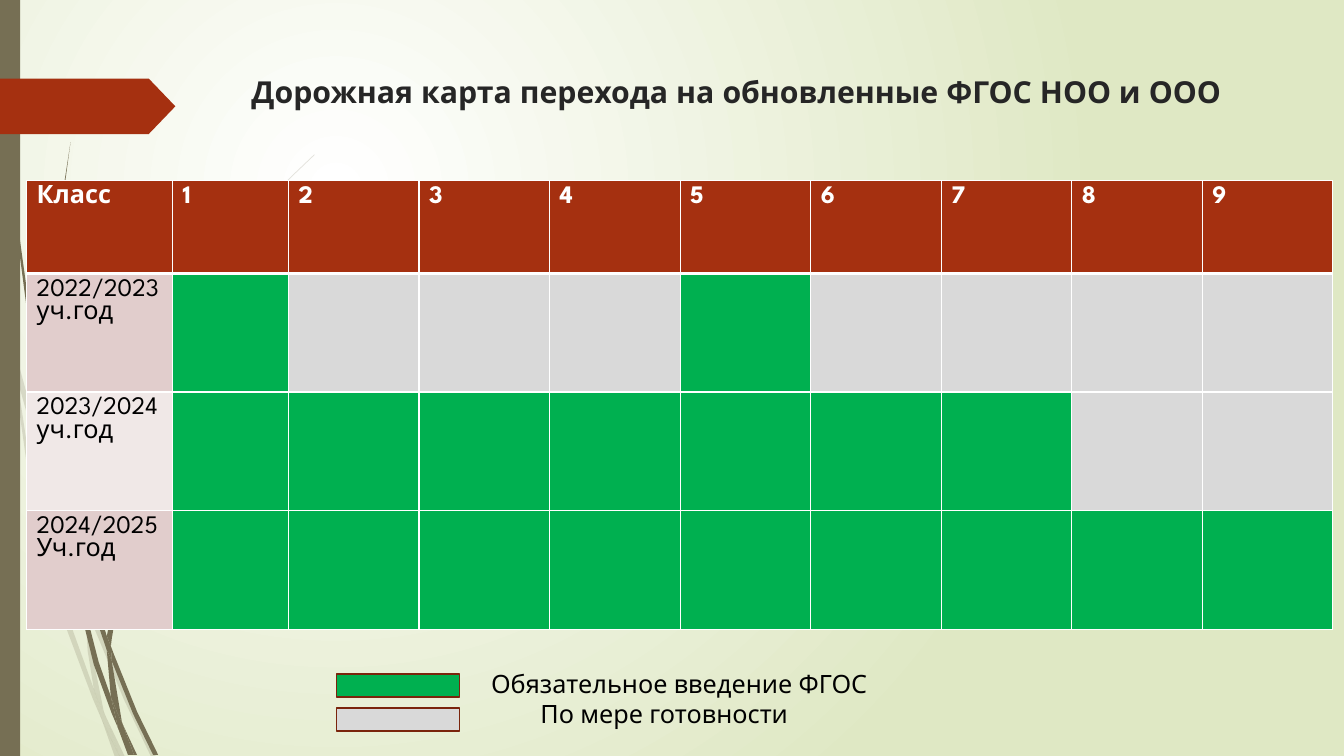
from lxml.etree import SubElement
from pptx import Presentation
from pptx.dml.color import RGBColor
from pptx.enum.shapes import MSO_SHAPE
from pptx.enum.text import MSO_ANCHOR, MSO_AUTO_SIZE, PP_ALIGN
from pptx.oxml import parse_xml
from pptx.oxml.ns import nsdecls, qn
from pptx.util import Cm, Pt

FONT = "League Spartan"
WHITE = RGBColor(0xFF, 0xFF, 0xFF)
BLACK = RGBColor(0x00, 0x00, 0x00)
TITLE_GREY = RGBColor(0x26, 0x26, 0x26)
PALE_OLIVE = RGBColor(0xDF, 0xE8, 0xC4)
OLIVE = RGBColor(0x76, 0x6F, 0x54)
RUST = RGBColor(0xA5, 0x30, 0x10)
DARK_RUST = RGBColor(0x7A, 0x24, 0x0C)
GREEN = RGBColor(0x00, 0xB0, 0x50)
GREY = RGBColor(0xD9, 0xD9, 0xD9)
ROSE = RGBColor(0xE1, 0xCD, 0xCC)
LIGHT_ROSE = RGBColor(0xF0, 0xE8, 0xE7)

# School year, its cell colour, and the classes where the standard is mandatory
YEARS = [
    ("2022/2023 уч.год", ROSE, {1, 5}),
    ("2023/2024 уч.год", LIGHT_ROSE, set(range(1, 8))),
    ("2024/2025\nУч.год", ROSE, set(range(1, 10))),
]
LEGEND = [("Обязательное введение ФГОС", GREEN), ("По мере готовности", GREY)]

# Grass outlines, in grid units of 0.0254 cm
GRASS_UNIT = Cm(0.0254)
FAINT_GRASS = [
    [(11, 350), (9, 322), (0, 282), (0, 299), (10, 344)],
    [(58, 522), (84, 599), (85, 586), (62, 520), (14, 345), (17, 376)],
    [(92, 607), (88, 596), (88, 610), (123, 694), (150, 751), (155, 751), (127, 692)],
    [(119, 751), (124, 751), (105, 711)],
    [(93, 683), (70, 619), (31, 469), (17, 376), (11, 350), (28, 470), (65, 621),
     (92, 693), (101, 714), (99, 707)],
    [(84, 599), (87, 646), (93, 683), (96, 692), (105, 711), (103, 706), (91, 646),
     (88, 610), (88, 608)],
    [(88, 584), (110, 462), (160, 349), (229, 245), (268, 198), (290, 175), (312, 154),
     (312, 153), (289, 175), (268, 197), (228, 244), (158, 348), (107, 461), (85, 584),
     (85, 586), (88, 596)],
    [(101, 714), (114, 751), (119, 751)],
    [(88, 608), (88, 596), (85, 586), (84, 599)],
    [(96, 692), (93, 683), (99, 707), (101, 714), (119, 751), (105, 711)],
]
SOLID_GRASS = [
    [(7, 110), (17, 233), (33, 355), (56, 477), (57, 481), (55, 457), (55, 453),
     (36, 355), (19, 232), (8, 109), (5, 48), (4, 0), (3, 0), (4, 48)],
    [(88, 592), (106, 645), (106, 631), (93, 590), (60, 472), (64, 505)],
    [(113, 649), (110, 641), (111, 656), (132, 708), (152, 749), (157, 749), (136, 706)],
    [(110, 691), (98, 657), (72, 556), (64, 505), (57, 477), (68, 557), (93, 659),
     (111, 708), (117, 722), (116, 717)],
    [(60, 472), (58, 453), (54, 349), (58, 245), (63, 193), (70, 141), (62, 193),
     (56, 245), (52, 349), (55, 449)],
    [(133, 749), (136, 749), (122, 719)],
    [(57, 477), (64, 505), (60, 472), (55, 449), (55, 453)],
    [(111, 633), (125, 552), (158, 476), (205, 406), (231, 374), (245, 359), (261, 344),
     (260, 344), (245, 358), (231, 373), (204, 405), (156, 474), (122, 551), (106, 631),
     (110, 641)],
    [(117, 722), (127, 749), (131, 749)],
    [(106, 645), (110, 691), (116, 706), (122, 719), (121, 716), (111, 656), (109, 651)],
    [(106, 645), (109, 651), (111, 656), (110, 641), (106, 631)],
    [(116, 706), (110, 691), (116, 717), (117, 722), (130, 749), (133, 749), (122, 719)],
]


def paint(shape, color, outline=None):
    shape.shadow.inherit = False
    shape.fill.solid()
    shape.fill.fore_color.rgb = color
    if outline is None:
        shape.line.fill.background()
    else:
        shape.line.color.rgb = outline
        shape.line.width = Pt(1.25)


def format_text(frame, size, color, bold=False, align=None):
    for para in frame.paragraphs:
        para.alignment = align
        for span in para.runs:
            span.font.name = FONT
            span.font.size = Pt(size)
            span.font.bold = bold
            span.font.color.rgb = color


def add_background(page):
    # A circular gradient centred in the upper left quarter
    page.background.fill.solid()
    properties = page.background._cSld.bg.bgPr
    properties.replace(properties[0], parse_xml(
        f'<a:gradFill {nsdecls("a")} rotWithShape="1"><a:gsLst>'
        f'<a:gs pos="0"><a:srgbClr val="{WHITE}"/></a:gs>'
        f'<a:gs pos="100000"><a:srgbClr val="{PALE_OLIVE}"/></a:gs></a:gsLst>'
        '<a:path path="circle"><a:fillToRect l="50000" t="50000" r="100000" b="100000"/>'
        '</a:path></a:gradFill>'))


def add_grass(page, outlines, opacity):
    for (start, *rest) in outlines:
        builder = page.shapes.build_freeform(*start, scale=GRASS_UNIT)
        builder.add_line_segments(rest, close=True)
        blade = builder.convert_to_shape()
        paint(blade, OLIVE)
        color = blade.fill._xPr.solidFill[0]
        SubElement(color, qn("a:alpha"), val=str(opacity * 1000))


def add_side_decoration(page, left, top, height):
    add_grass(page, FAINT_GRASS, 20)
    add_grass(page, SOLID_GRASS, 100)
    bar = page.shapes.add_shape(MSO_SHAPE.RECTANGLE, left, top, Cm(0.51), height)
    paint(bar, OLIVE)
    tag = page.shapes.add_shape(MSO_SHAPE.PENTAGON, left, top + Cm(1.98), Cm(4.42), Cm(1.4))
    tag.adjustments[0] = 0.48
    paint(tag, RUST)


def add_title(page, left, top, width, height):
    title = page.shapes.title
    title.left, title.top, title.width, title.height = left, top, width, height
    frame = title.text_frame
    frame.text = "Дорожная карта перехода на обновленные ФГОС НОО и ООО"
    frame.word_wrap = True
    frame.auto_size = MSO_AUTO_SIZE.NONE
    frame.vertical_anchor = MSO_ANCHOR.TOP
    format_text(frame, 21.6, TITLE_GREY, True, PP_ALIGN.CENTER)


def fill_cell(cell, color, bottom=1):
    properties = cell._tc.get_or_add_tcPr()
    for side, points in (("L", 1), ("R", 1), ("T", 1), ("B", bottom)):
        line = SubElement(properties, qn(f"a:ln{side}"), w=str(Pt(points)))
        SubElement(SubElement(line, qn("a:solidFill")), qn("a:srgbClr"), val=str(WHITE))
    cell.fill.solid()
    cell.fill.fore_color.rgb = color


def add_roadmap(page, left, top):
    widths = [Cm(3.68), Cm(2.92)] + [Cm(3.29)] * 8
    heights = [Cm(2.34)] + [Cm(2.99)] * len(YEARS)
    table = page.shapes.add_table(len(heights), len(widths), left, top,
                                  sum(widths), sum(heights)).table
    table.horz_banding = False
    for column, width in zip(table.columns, widths):
        column.width = width
    for row, height in zip(table.rows, heights):
        row.height = height

    # Header row
    for index in range(len(widths)):
        cell = table.cell(0, index)
        cell.text = str(index) if index else "Класс"
        fill_cell(cell, RUST, bottom=3)
        format_text(cell.text_frame, 18, WHITE, True)

    # One row for each school year
    for row, (year, color, mandatory) in enumerate(YEARS, 1):
        head = table.cell(row, 0)
        head.text = year
        fill_cell(head, color)
        format_text(head.text_frame, 18, BLACK)
        for grade in range(1, len(widths)):
            fill_cell(table.cell(row, grade), GREEN if grade in mandatory else GREY)


def add_legend(page, left, top, width, height):
    box = page.shapes.add_textbox(left, top, width, height)
    frame = box.text_frame
    frame.word_wrap = True
    frame.text = "\n".join(label for label, color in LEGEND)
    format_text(frame, 18, BLACK, align=PP_ALIGN.CENTER)
    frame.paragraphs[0]._p.get_or_add_pPr().set("marL", str(Cm(0.76)))
    for index, (label, color) in enumerate(LEGEND):
        swatch = page.shapes.add_shape(MSO_SHAPE.RECTANGLE, left + Cm(0.4),
                                       top + Cm(0.28) + index * Cm(0.86), Cm(3.1), Cm(0.57))
        paint(swatch, color, DARK_RUST)


def main():
    deck = Presentation()
    deck.slide_width, deck.slide_height = Cm(33.87), Cm(19.05)
    page = deck.slides.add_slide(deck.slide_layouts[5])
    add_background(page)
    add_side_decoration(page, 0, 0, deck.slide_height)
    add_title(page, Cm(5.16), Cm(1.73), Cm(26.8), Cm(1.96))
    add_roadmap(page, Cm(0.67), Cm(4.55))
    add_legend(page, Cm(8.08), Cm(16.71), Cm(17.32), Cm(1.8))
    deck.save("out.pptx")


if __name__ == "__main__":
    main()
